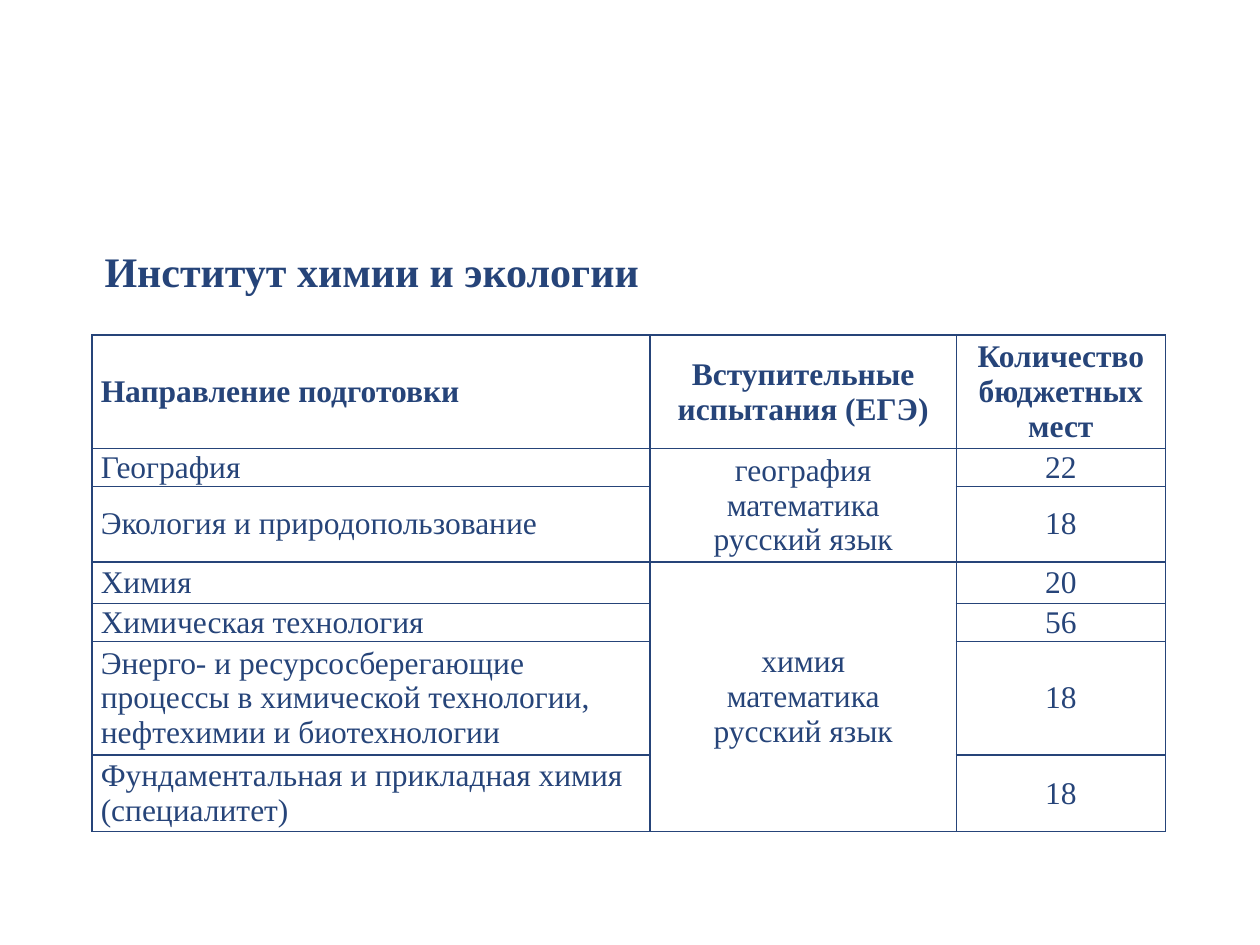
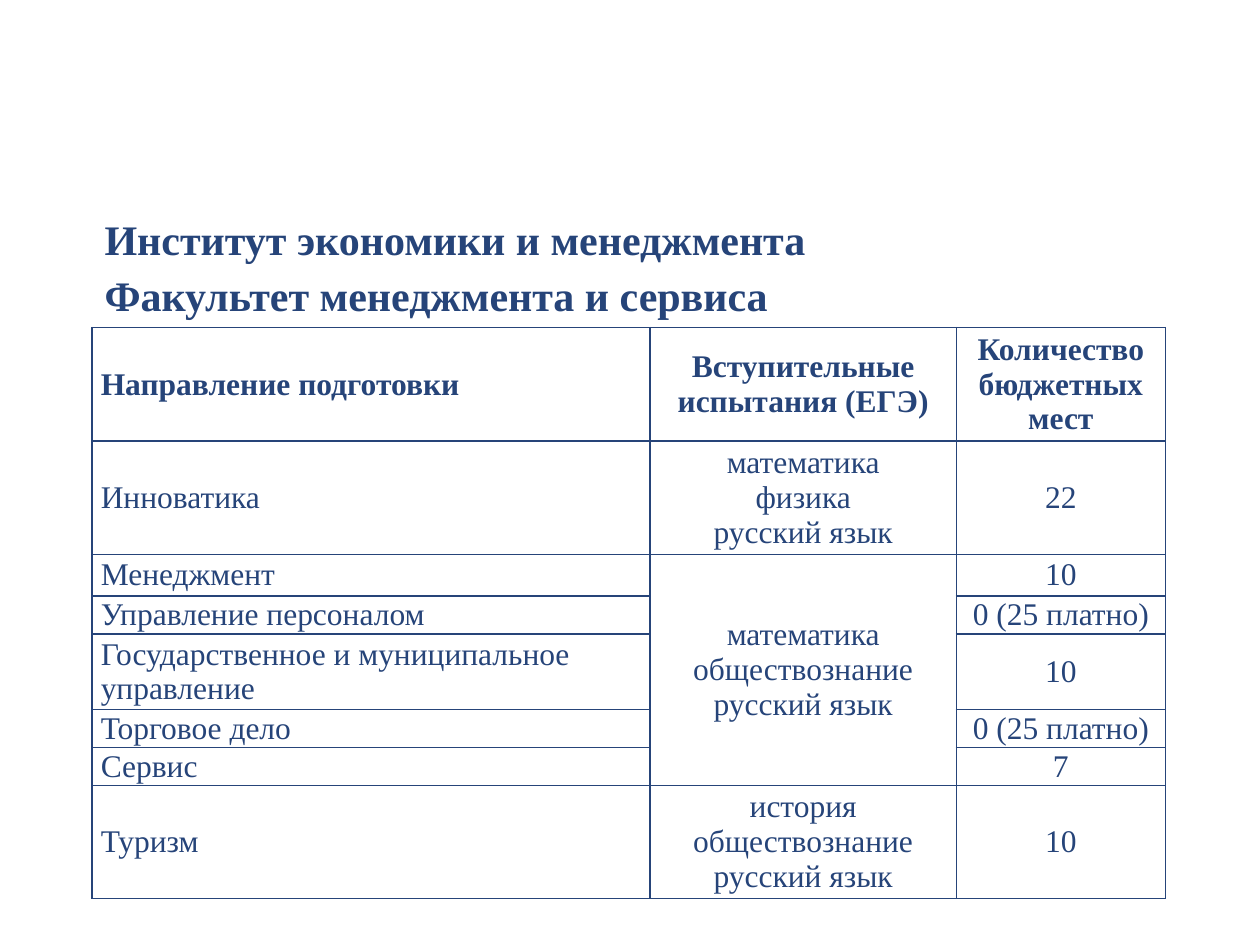
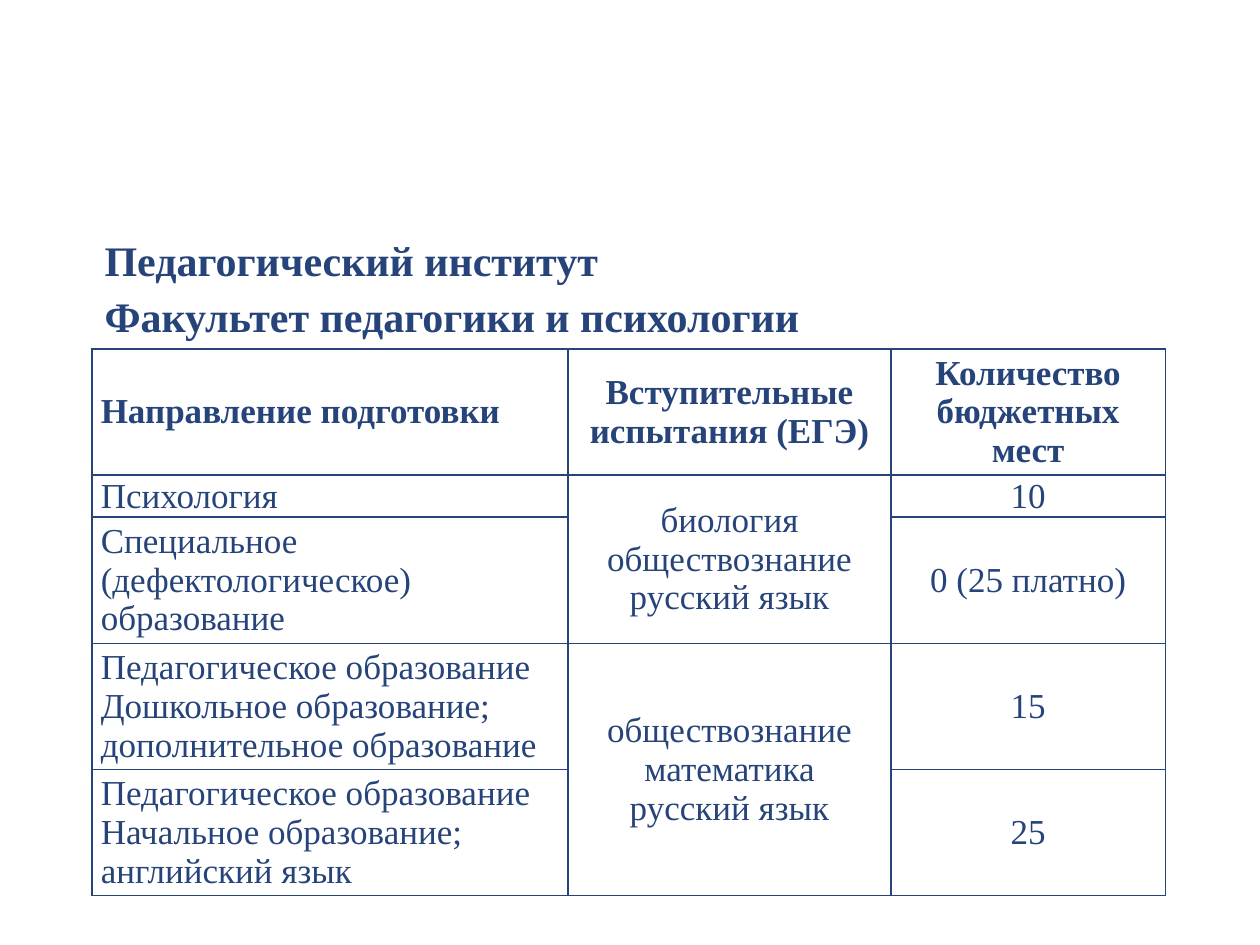
import pptx
import pptx.dml.color
import pptx.enum.text
import pptx.oxml
import pptx.oxml.ns
import pptx.util
from pptx.util import Inches

NAVY = "264479"
WHITE = "FFFFFF"
FONT = "Times New Roman"
LEFT = 0.73
HEADINGS = ("Направление подготовки", "Вступительные испытания (ЕГЭ)", "Количество бюджетных мест")

INSTITUTES = [
    {
        "title": "Институт химии и экологии",
        "title_box": (1.85, 6.26, 0.55), "wrap": True,
        "table_top": 2.66, "columns": (4.43, 2.43, 1.66), "size": 18, "heading_height": 0.9,
        "groups": [
            ("география\nматематика\nрусский язык", [
                ("География", "22", 0.3),
                ("Экология и природопользование", "18", 0.6),
            ]),
            ("химия\nматематика\nрусский язык", [
                ("Химия", "20", 0.33),
                ("Химическая технология", "56", 0.3),
                ("Энерго- и ресурсосберегающие процессы в химической технологии, "
                 "нефтехимии и биотехнологии", "18", 0.9),
                ("Фундаментальная и прикладная химия (специалитет)", "18", 0.61),
            ]),
        ],
    },
    {
        "title": "Институт экономики и менеджмента\nФакультет менеджмента и сервиса",
        "title_box": (1.6, 9.08, 1), "wrap": True,
        "table_top": 2.6, "columns": (4.43, 2.43, 1.66), "size": 18, "heading_height": 0.9,
        "groups": [
            ("математика\nфизика\nрусский язык", [("Инноватика", "22", 0.9)]),
            ("математика\nобществознание\nрусский язык", [
                ("Менеджмент", "10", 0.33),
                ("Управление персоналом", "0 (25 платно)", 0.3),
                ("Государственное и муниципальное управление", "10", 0.6),
                ("Торговое дело", "0 (25 платно)", 0.3),
                ("Сервис", "7", 0.3),
            ]),
            ("история\nобществознание\nрусский язык", [("Туризм", "10", 0.9)]),
        ],
    },
    {
        "title": "Педагогический институт\nФакультет педагогики и психологии",
        "title_box": (1.77, 5.77, 1), "wrap": False,
        "table_top": 2.77, "columns": (3.78, 2.56, 2.18), "size": 20, "heading_height": 1,
        "groups": [
            ("биология\nобществознание\nрусский язык", [
                ("Психология", "10", 0.33),
                ("Специальное (дефектологическое) образование", "0 (25 платно)", 1),
            ]),
            ("обществознание\nматематика\nрусский язык", [
                ("Педагогическое образование\n"
                 "Дошкольное образование; дополнительное образование", "15", 1),
                ("Педагогическое образование\nНачальное образование; английский язык", "25", 1),
            ]),
        ],
    },
]


def color(hex_code):
    return pptx.dml.color.RGBColor.from_string(hex_code)


def format_text(frame, size, bold, align):
    for paragraph in frame.paragraphs:
        paragraph.alignment = align
        font = paragraph.font
        font.name, font.size, font.bold = FONT, pptx.util.Pt(size), bold
        font.color.rgb = color(NAVY)


def add_title(slide, institute):
    top, width, height = institute["title_box"]
    title = slide.shapes.title
    title.left, title.top = Inches(LEFT), Inches(top)
    title.width, title.height = Inches(width), Inches(height)
    frame = title.text_frame
    frame.text = institute["title"]
    frame.word_wrap = institute["wrap"]
    frame.auto_size = pptx.enum.text.MSO_AUTO_SIZE.SHAPE_TO_FIT_TEXT
    frame.vertical_anchor = pptx.enum.text.MSO_ANCHOR.TOP
    format_text(frame, 24, True, pptx.enum.text.PP_ALIGN.LEFT)
    for paragraph in frame.paragraphs:
        paragraph.line_spacing = pptx.util.Pt(32)


def add_borders(cell):
    properties = cell._tc.get_or_add_tcPr()
    for side in ("lnL", "lnR", "lnT", "lnB"):
        properties.append(pptx.oxml.parse_xml(
            f'<a:{side} {pptx.oxml.ns.nsdecls("a")} w="12700"><a:solidFill>'
            f'<a:srgbClr val="{NAVY}"/></a:solidFill></a:{side}>'))


def format_cell(cell, size, heading, first_column):
    add_borders(cell)
    cell.fill.solid()
    cell.fill.fore_color.rgb = color(WHITE)
    cell.margin_left = cell.margin_right = Inches(0.07)
    cell.margin_top = cell.margin_bottom = 0
    cell.vertical_anchor = pptx.enum.text.MSO_ANCHOR.MIDDLE
    alignments = pptx.enum.text.PP_ALIGN
    format_text(cell.text_frame, size, heading, alignments.LEFT if first_column else alignments.CENTER)


def add_programmes(slide, institute):
    heights = [institute["heading_height"]]
    heights += [height for _, programmes in institute["groups"] for _, _, height in programmes]
    columns = institute["columns"]
    table = slide.shapes.add_table(
        len(heights), len(columns), Inches(LEFT), Inches(institute["table_top"]),
        Inches(sum(columns)), Inches(sum(heights))).table
    table.first_row = table.horz_banding = False
    for column, width in zip(table.columns, columns):
        column.width = Inches(width)
    for row, height in zip(table.rows, heights):
        row.height = Inches(height)

    for index, heading in enumerate(HEADINGS):
        table.cell(0, index).text = heading
    start = 1
    for exams, programmes in institute["groups"]:
        table.cell(start, 1).text = exams
        for row, (programme, places, _) in enumerate(programmes, start):
            table.cell(row, 0).text = programme
            table.cell(row, 2).text = places
        if len(programmes) > 1:
            table.cell(start, 1).merge(table.cell(start + len(programmes) - 1, 1))
        start += len(programmes)

    for row in range(len(heights)):
        for column in range(len(columns)):
            format_cell(table.cell(row, column), institute["size"], row == 0, column == 0)


def main():
    presentation = pptx.Presentation()
    presentation.slide_width, presentation.slide_height = Inches(10), Inches(7.5)
    for institute in INSTITUTES:
        slide = presentation.slides.add_slide(presentation.slide_layouts[5])
        add_title(slide, institute)
        add_programmes(slide, institute)
    presentation.save("out.pptx")


if __name__ == "__main__":
    main()
